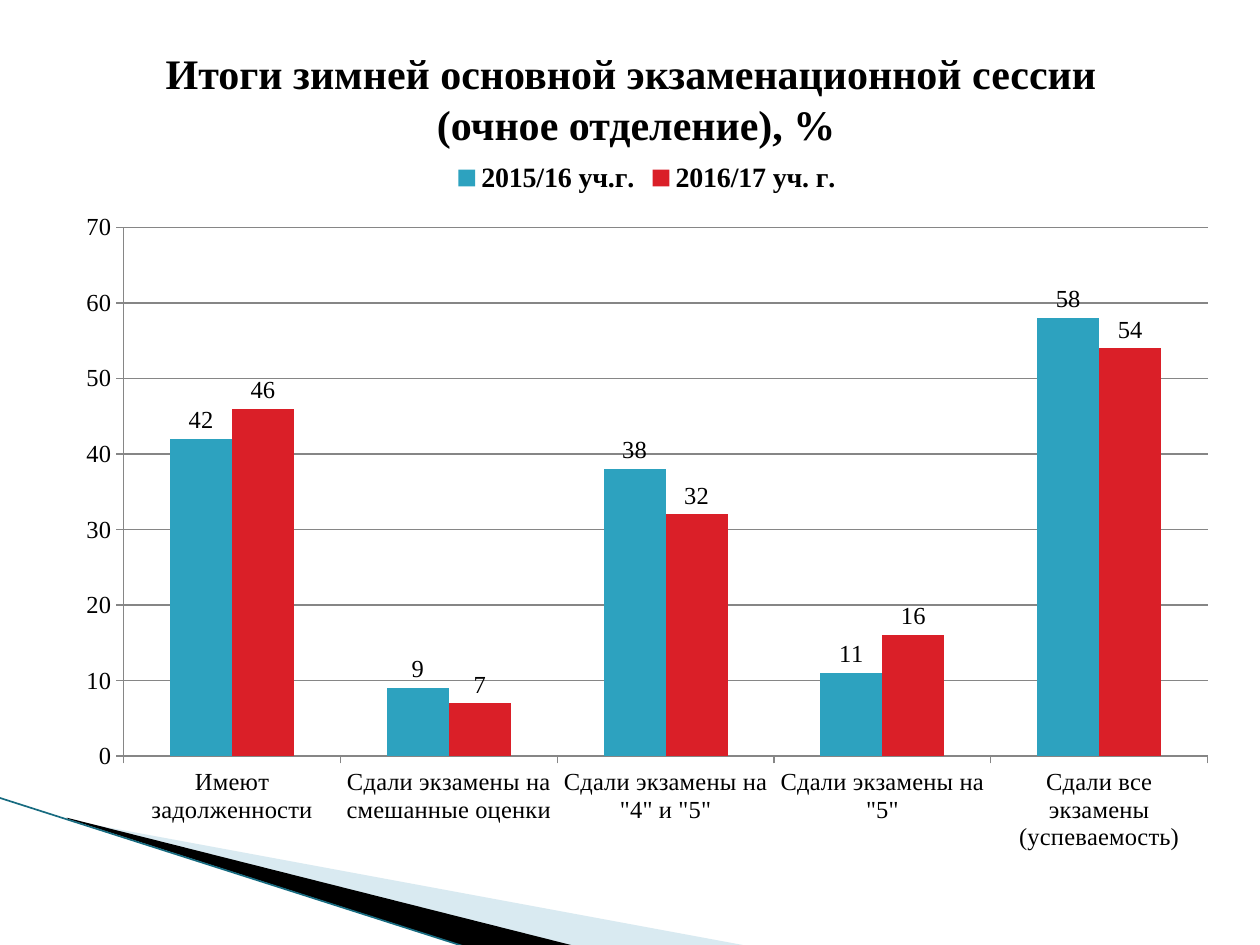
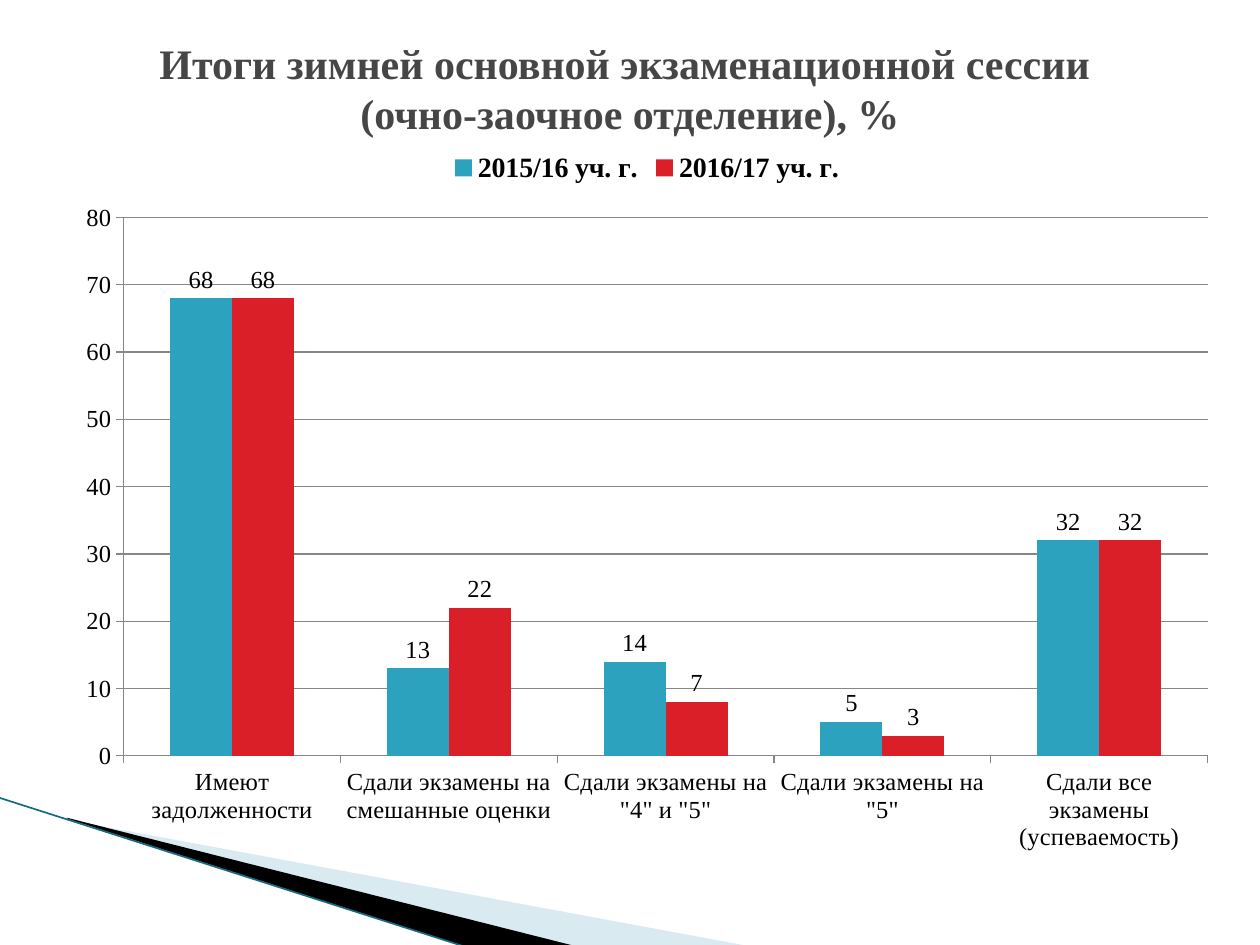
from lxml import etree
from pptx import Presentation
from pptx.chart.data import CategoryChartData
from pptx.dml.color import RGBColor
from pptx.enum.chart import XL_CHART_TYPE as ChartType
from pptx.enum.chart import XL_LABEL_POSITION as LabelPosition
from pptx.enum.chart import XL_LEGEND_POSITION as LegendPosition
from pptx.enum.chart import XL_TICK_MARK as TickMark
from pptx.enum.shapes import MSO_CONNECTOR as Connector
from pptx.enum.text import MSO_ANCHOR as Anchor
from pptx.enum.text import MSO_AUTO_SIZE as AutoSize
from pptx.enum.text import PP_ALIGN as Align
from pptx.oxml.ns import qn
from pptx.util import Inches, Pt

FONT = "Times New Roman"
COLORS = {
    "black": "000000", "gray": "464646", "axis": "868686",
    "teal": "2DA2BF", "red": "DA1F28", "pale": "A0CBDC", "edge": "176B80",
}
SERIES_COLORS = ("teal", "red")
CATEGORIES = [
    "Имеют задолженности",
    "Сдали экзамены на смешанные оценки",
    'Сдали экзамены на "4" и "5"',
    'Сдали экзамены на "5"',
    "Сдали все экзамены (успеваемость)",
]
TITLE = "Итоги зимней основной экзаменационной сессии \v({} отделение), %"

# Boxes are left, top, width, height in inches
SLIDES = [
    {
        "department": "очное", "title_color": "black",
        "title_box": (0.55, 0.31, 9, 0.94), "chart_box": (0.5, 1.17, 9.27, 5.7),
        "series": [("2015/16 уч.г.", (42, 9, 38, 11, 58)),
                   ("2016/17 уч. г.", (46, 7, 32, 16, 54))],
        "custom_labels": [],
    },
    {
        "department": "очно-заочное", "title_color": "gray",
        "title_box": (0.5, 0.3, 9, 0.79), "chart_box": (0.5, 1.09, 9.27, 5.78),
        "series": [("2015/16 уч. г.", (68, 13, 14, 5, 32)),
                   ("2016/17 уч. г.", (68, 22, 8, 3, 32))],
        "custom_labels": [(1, 2, "7")],  # series, point, text
    },
]

# Corner wedges: outline, colour, opacity in percent
WEDGES = [
    ([(0.55, 6.51), (5.95, 7.51), (4.56, 7.51), (0.55, 6.5)], "pale", 40),
    ([(0.53, 6.49), (4.57, 7.51), (3.72, 7.52), (0.54, 6.5)], "black", 100),
]
EDGE = (-0.01, 6.33, 3.71, 7.52)


def rgb(name):
    return RGBColor.from_string(COLORS[name])


def inches(values):
    return [Inches(value) for value in values]


def style_font(font, size=14, bold=False, color="black"):
    font.name, font.size, font.bold = FONT, Pt(size), bold
    font.color.rgb = rgb(color)


def write(frame, text, align=Align.CENTER, spacing=None, **font_format):
    frame.text = text
    for para in frame.paragraphs:
        para.alignment = align
        para.line_spacing = spacing
        for span in para.runs:
            style_font(span.font, **font_format)


def add_corner(page, layout):
    """Draw the corner wedges and move them to the shared layout."""
    parts = []
    for outline, color, opacity in WEDGES:
        points = [inches(point) for point in outline]
        builder = page.shapes.build_freeform(*points[0])
        builder.add_line_segments(points[1:], close=True)
        wedge = builder.convert_to_shape()
        wedge.shadow.inherit = False
        wedge.fill.solid()
        wedge.fill.fore_color.rgb = rgb(color)
        wedge.line.fill.background()
        if opacity < 100:
            tint = wedge.element.spPr.find(".//" + qn("a:srgbClr"))
            etree.SubElement(tint, qn("a:alpha"), val=str(opacity * 1000))
        parts.append(wedge)
    edge = page.shapes.add_connector(Connector.STRAIGHT, *inches(EDGE))
    edge.line.color.rgb = rgb("edge")
    edge.line.width = Pt(0.95)
    etree.SubElement(edge.element.spPr, qn("a:effectLst"))
    for part in parts + [edge]:
        layout.shapes.element.append(part.element)


def add_title(page, content):
    title = page.shapes.title
    title.left, title.top, title.width, title.height = inches(content["title_box"])
    frame = title.text_frame
    frame.word_wrap = True
    frame.auto_size = AutoSize.NONE
    frame.vertical_anchor = Anchor.MIDDLE
    write(frame, TITLE.format(content["department"]), spacing=Pt(28.8),
          size=24, bold=True, color=content["title_color"])


def style_axis(axis):
    axis.major_tick_mark = TickMark.OUTSIDE
    axis.minor_tick_mark = TickMark.NONE
    axis.format.line.color.rgb = rgb("axis")
    style_font(axis.tick_labels.font)


def add_chart(page, content):
    data = CategoryChartData()
    data.categories = CATEGORIES
    for name, values in content["series"]:
        data.add_series(name, values)
    chart = page.shapes.add_chart(
        ChartType.COLUMN_CLUSTERED, *inches(content["chart_box"]), data).chart
    style_font(chart.font)
    chart.has_title = False

    # Legend and axes
    chart.has_legend = True
    chart.legend.position = LegendPosition.TOP
    chart.legend.include_in_layout = False
    style_font(chart.legend.font, size=16, bold=True)
    style_axis(chart.category_axis)
    style_axis(chart.value_axis)
    chart.value_axis.has_major_gridlines = True
    chart.value_axis.major_gridlines.format.line.color.rgb = rgb("axis")

    # Columns and their values
    plot = chart.plots[0]
    plot.gap_width, plot.overlap = 150, 0
    plot.vary_by_categories = False
    for series, color in zip(plot.series, SERIES_COLORS):
        series.format.fill.solid()
        series.format.fill.fore_color.rgb = rgb(color)
        labels = series.data_labels
        labels.show_value = True
        labels.position = LabelPosition.OUTSIDE_END
        style_font(labels.font)
    for series_index, point_index, text in content["custom_labels"]:
        label = plot.series[series_index].points[point_index].data_label
        write(label.text_frame, text)
        label.position = LabelPosition.OUTSIDE_END


def main():
    deck = Presentation()
    deck.slide_width, deck.slide_height = Inches(10), Inches(7.5)
    layout = deck.slide_layouts.get_by_name("Title Only")
    for index, content in enumerate(SLIDES):
        page = deck.slides.add_slide(layout)
        if index == 0:
            add_corner(page, layout)
        add_title(page, content)
        add_chart(page, content)
    deck.save("out.pptx")


if __name__ == "__main__":
    main()
